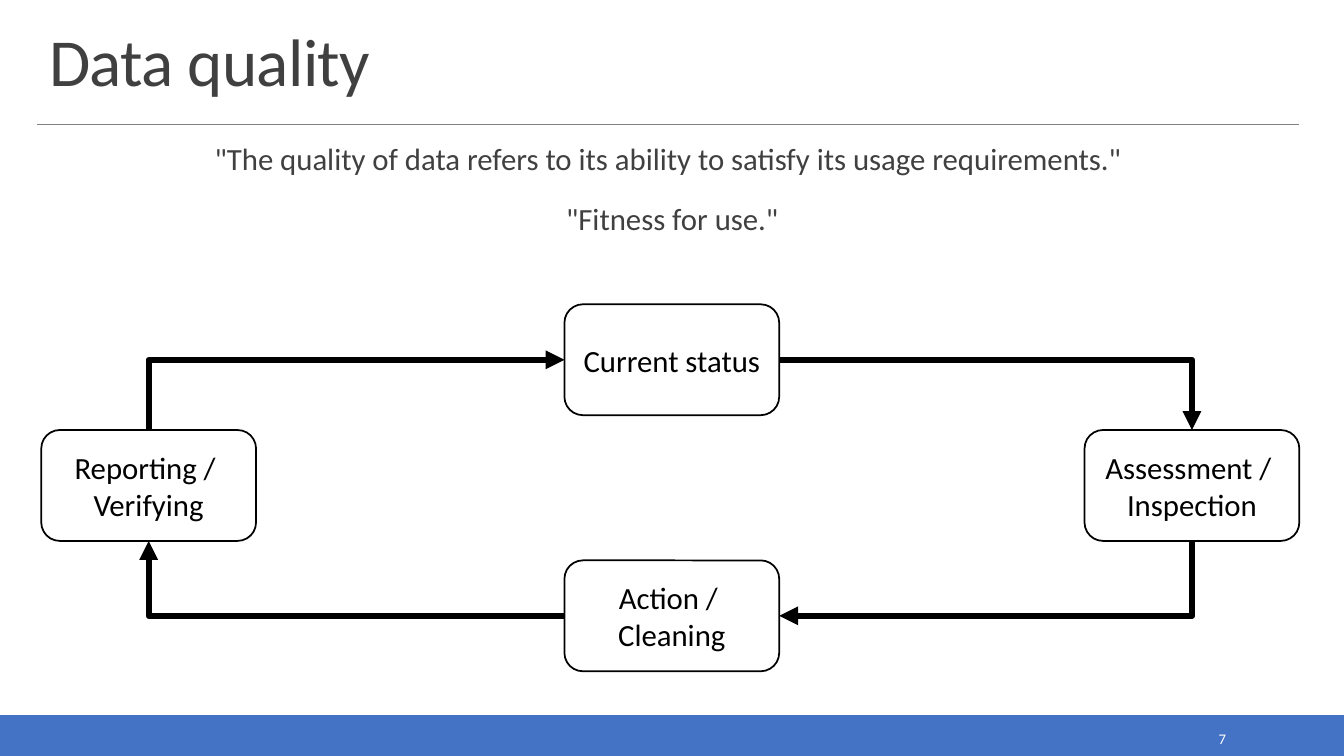
import pptx
import pptx.dml.color
import pptx.enum.shapes
import pptx.enum.text
import pptx.oxml.ns
import pptx.util
import lxml.etree

Pt = pptx.util.Pt
ALIGN = pptx.enum.text.PP_ALIGN
ANCHOR = pptx.enum.text.MSO_ANCHOR
SHAPE = pptx.enum.shapes.MSO_SHAPE
CONNECTOR = pptx.enum.shapes.MSO_CONNECTOR
TOP, LEFT, BOTTOM, RIGHT = range(4)


def color(hex_string):
    return pptx.dml.color.RGBColor.from_string(hex_string)


def add_tag(parent, tag, **attributes):
    return lxml.etree.SubElement(parent, pptx.oxml.ns.qn(tag), attributes)


def write_text(shape, *lines, size=22, ink="000000", align=ALIGN.CENTER,
               anchor=ANCHOR.MIDDLE, spacing=None, tracking=None, insets=(7.2, 3.6)):
    """Write one paragraph per line; a vertical tab breaks a line within it."""
    frame = shape.text_frame
    frame.word_wrap = True
    frame.auto_size = pptx.enum.text.MSO_AUTO_SIZE.NONE
    frame.vertical_anchor = anchor
    frame.margin_left = frame.margin_right = Pt(insets[0])
    frame.margin_top = frame.margin_bottom = Pt(insets[1])
    frame.text = "\n".join(lines)
    for paragraph in frame.paragraphs:
        paragraph.alignment = align
        paragraph.line_spacing = spacing
        for run in paragraph.runs:
            run.font.name = "Calibri"
            run.font.size = Pt(size)
            run.font.color.rgb = color(ink)
            if tracking is not None:
                run.font._element.set("spc", str(round(tracking * 100)))


class CycleSlide:
    accent, ink, gray, black, white = "4472C4", "404040", "808080", "000000", "FFFFFF"
    box_width, box_height = 153.4, 79.2

    def __init__(self, presentation):
        self.slide = presentation.slides.add_slide(presentation.slide_layouts[5])
        self.shapes = self.slide.shapes

    def title(self, text, left, top, width, height):
        title = self.shapes.title
        title.left, title.top, title.width, title.height = map(Pt, (left, top, width, height))
        write_text(title, text, size=48, ink=self.ink, align=ALIGN.LEFT,
                   anchor=ANCHOR.BOTTOM, spacing=0.85, tracking=-0.5)

    def text(self, text, left, top, width, height, **style):
        box = self.shapes.add_textbox(Pt(left), Pt(top), Pt(width), Pt(height))
        write_text(box, text, **style)

    def quote(self, text, left, top):
        self.text(text, left, top, 901.4, 33.8, ink=self.ink, anchor=ANCHOR.TOP,
                  spacing=0.9, insets=(0, 2.9))

    def shape(self, kind, left, top, width, height, line, fill=None):
        shape = self.shapes.add_shape(kind, Pt(left), Pt(top), Pt(width), Pt(height))
        shape.shadow.inherit = False
        shape.line.color.rgb = color(line)
        shape.line.width = Pt(1.25)
        if fill:
            shape.fill.solid()
            shape.fill.fore_color.rgb = color(fill)
        else:
            shape.fill.background()
        return shape

    def step(self, left, top, *lines):
        box = self.shape(SHAPE.ROUNDED_RECTANGLE, left, top,
                         self.box_width, self.box_height, self.black)
        write_text(box, *lines)
        return box

    def connector(self, kind, start, end, ink, weight):
        connector = self.shapes.add_connector(kind, *map(Pt, start + end))
        connector.line.color.rgb = color(ink)
        connector.line.width = Pt(weight)
        add_tag(connector._element.spPr, "a:effectLst")
        return connector

    def clockwise_arrow(self, source, source_side, target, target_side):
        """Join two steps with a one-bend arrow that turns to the right."""
        arrow = self.connector(CONNECTOR.ELBOW, (0, 0), (0, 0), self.black, 4.5)
        arrow.begin_connect(source, source_side)
        arrow.end_connect(target, target_side)
        add_tag(arrow.line._get_or_add_ln(), "a:tailEnd", type="triangle")

        # Turn the right-then-down bend by quarters about its centre
        quarters = {RIGHT: 0, BOTTOM: 1, LEFT: 2, TOP: 3}[source_side]
        center_x = (arrow.begin_x + arrow.end_x) // 2
        center_y = (arrow.begin_y + arrow.end_y) // 2
        width, height = arrow.width, arrow.height
        if quarters % 2:
            width, height = height, width
        arrow.left, arrow.top = center_x - width // 2, center_y - height // 2
        arrow.width, arrow.height = width, height
        properties = arrow._element.spPr
        transform = properties.find(pptx.oxml.ns.qn("a:xfrm"))
        for flip in ("flipH", "flipV"):
            transform.attrib.pop(flip, None)
        transform.set("rot", str(quarters * 90 * 60000))
        properties.find(pptx.oxml.ns.qn("a:prstGeom")).set("prst", "bentConnector2")


def main():
    presentation = pptx.Presentation()
    presentation.slide_width, presentation.slide_height = Pt(960), Pt(540)
    page = CycleSlide(presentation)

    # Frame: footer band, rule, title and page number
    page.shape(SHAPE.RECTANGLE, 0, 511.2, 960, 28.8, page.accent, page.accent)
    page.connector(CONNECTOR.STRAIGHT, (26.6, 88.8), (928, 88.8), page.gray, 0.5)
    page.title("Data quality", 28.1, 14.4, 901.4, 60.5)
    page.text("7", 779.8, 517.7, 103, 20.2, size=10.5, ink=page.white, align=ALIGN.RIGHT)

    # Definitions
    page.quote('"The quality of data refers to its ability to satisfy its usage requirements."',
               26.6, 100.1)
    page.quote('"Fitness for use."', 29.5, 142.6)

    # Quality cycle
    status = page.step(403.2, 217.4, "Current status")
    assessment = page.step(774.7, 307.2, "Assessment / \vInspection")
    action = page.step(403.2, 400.3, "Action / ", "Cleaning")
    reporting = page.step(29.5, 307.2, "Reporting / \vVerifying")
    page.clockwise_arrow(status, RIGHT, assessment, TOP)
    page.clockwise_arrow(assessment, BOTTOM, action, RIGHT)
    page.clockwise_arrow(action, LEFT, reporting, BOTTOM)
    page.clockwise_arrow(reporting, TOP, status, LEFT)

    presentation.save("out.pptx")


if __name__ == "__main__":
    main()
